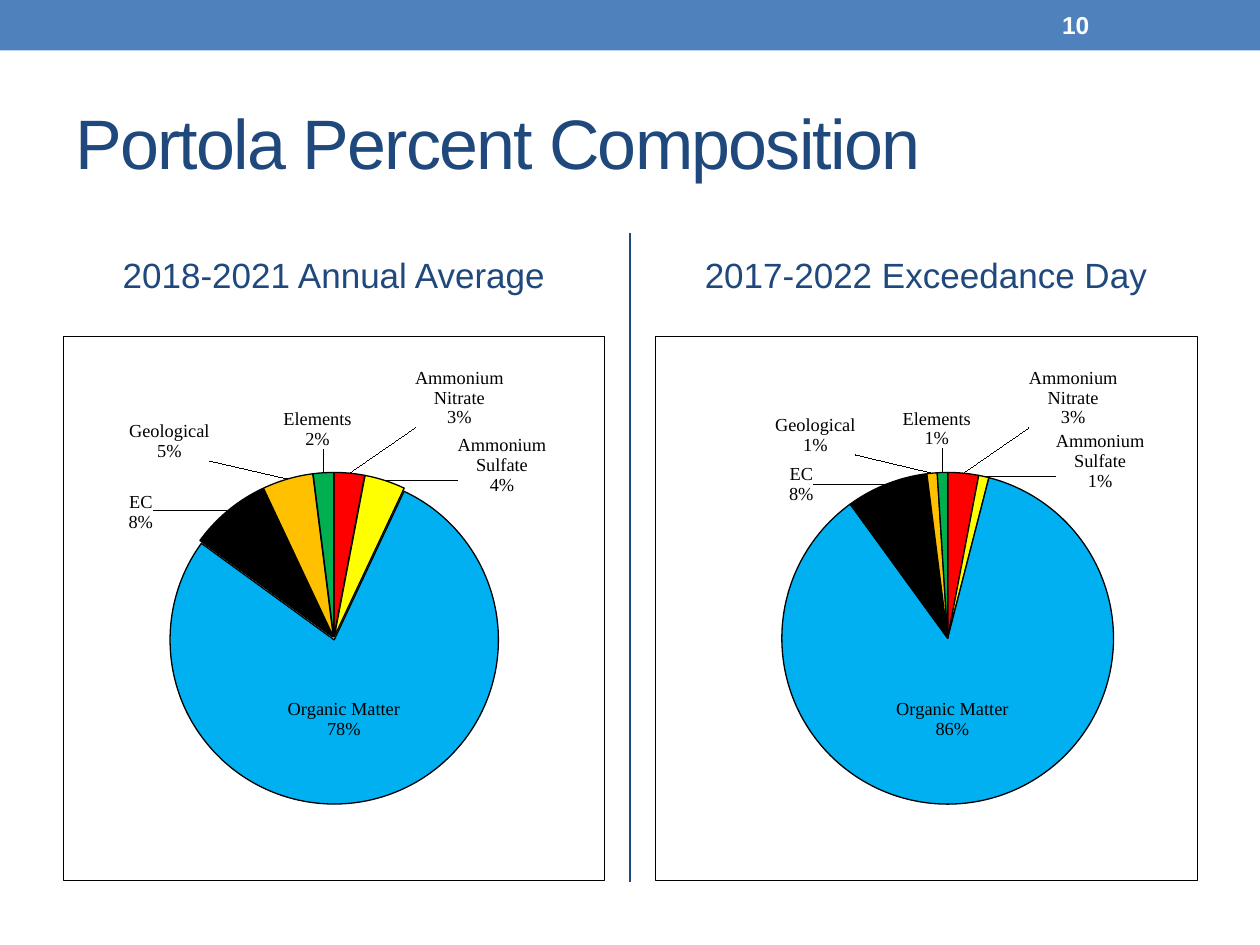
from dataclasses import dataclass

from lxml.etree import SubElement
from pptx import Presentation
from pptx.chart.data import CategoryChartData
from pptx.dml.color import RGBColor
from pptx.enum.chart import XL_CHART_TYPE as ChartType
from pptx.enum.shapes import MSO_CONNECTOR as Connector, MSO_SHAPE as Shape
from pptx.enum.text import MSO_ANCHOR as Anchor, PP_ALIGN as Align
from pptx.oxml import parse_xml
from pptx.oxml.ns import nsdecls, qn
from pptx.util import Pt

NAVY, BLUE, WHITE, BLACK = "1F497D", "4F81BD", "FFFFFF", "000000"
PANEL_WIDTH = 309.6


@dataclass(frozen=True)
class Component:
    name: str
    color: str
    label_x: float
    label_y: float
    label_position: str = "outEnd"


@dataclass(frozen=True)
class Panel:
    left: float
    heading: str
    shares: tuple[int, ...]
    plot_left: float
    explosion: int = 0


@dataclass(frozen=True)
class TextStyle:
    size: float
    color: str
    bold: bool = False
    align: Align = Align.LEFT
    space_before: float = 0
    spacing: int = 0


COMPONENTS = (
    Component("Ammonium Nitrate", "FF0000", 0.12, -0.07),
    Component("Ammonium Sulfate", "FFFF00", 0.13, 0.04),
    Component("Organic Matter", "00B0F0", -0.02, 0, "ctr"),
    Component("EC", BLACK, -0.13, 0.05),
    Component("Geological", "FFC000", -0.14, -0.02),
    Component("Elements", "00B050", -0.01, -0.03),
)
PANELS = (
    Panel(36, "2018-2021 Annual Average", (3, 4, 78, 8, 5, 2), 0.18, 1),
    Panel(374.4, "2017-2022 Exceedance Day", (3, 1, 86, 8, 1, 1), 0.22),
)
TITLE = TextStyle(40, NAVY, spacing=-100)
HEADING = TextStyle(20, NAVY, align=Align.CENTER, space_before=4)
PAGE_NUMBER = TextStyle(14, WHITE, bold=True)


def rgb(value: str) -> RGBColor:
    return RGBColor.from_string(value)


def add_text(slide, text: str, left: float, top: float, width: float,
             height: float, style: TextStyle) -> None:
    shape = slide.shapes.add_textbox(Pt(left), Pt(top), Pt(width), Pt(height))
    frame = shape.text_frame
    frame.word_wrap = True
    frame.vertical_anchor = Anchor.MIDDLE
    paragraph = frame.paragraphs[0]
    paragraph.text = text
    paragraph.alignment = style.align
    paragraph.space_before = Pt(style.space_before)
    font = paragraph.font
    font.name, font.size, font.bold = "Arial", Pt(style.size), style.bold
    font.color.rgb = rgb(style.color)
    if style.spacing:
        properties = paragraph._p.get_or_add_pPr().find(qn("a:defRPr"))
        properties.set("spc", str(style.spacing))


def add_value(parent, tag: str, value) -> None:
    SubElement(parent, qn(f"c:{tag}")).set("val", str(value))


def add_layout(parent, **values) -> None:
    layout = SubElement(SubElement(parent, qn("c:layout")), qn("c:manualLayout"))
    for tag, value in values.items():
        add_value(layout, tag, value)


def add_label_settings(parent, position: str) -> None:
    parent.append(parse_xml(
        f'<c:txPr {nsdecls("c", "a")}><a:bodyPr/><a:p><a:pPr><a:defRPr sz="1050">'
        f'<a:solidFill><a:srgbClr val="{BLACK}"/></a:solidFill>'
        '<a:latin typeface="Times New Roman"/></a:defRPr></a:pPr></a:p></c:txPr>'))
    add_value(parent, "dLblPos", position)
    shown = ("showCatName", "showPercent")
    for tag in ("showLegendKey", "showVal", "showCatName", "showSerName",
                "showPercent", "showBubbleSize"):
        add_value(parent, tag, int(tag in shown))
    SubElement(parent, qn("c:separator")).text = "\n"


def add_labels(series) -> None:
    labels = parse_xml(f'<c:dLbls {nsdecls("c", "a")}/>')
    for index, component in enumerate(COMPONENTS):
        label = SubElement(labels, qn("c:dLbl"))
        add_value(label, "idx", index)
        add_layout(label, x=component.label_x, y=component.label_y)
        add_label_settings(label, component.label_position)
    add_label_settings(labels, "outEnd")
    add_value(labels, "showLeaderLines", 1)
    series._element.find(qn("c:cat")).addprevious(labels)


def set_outline(line) -> None:
    line.color.rgb = rgb(BLACK)
    line.width = Pt(0.75)


def add_pie(slide, panel: Panel) -> None:
    data = CategoryChartData()
    data.categories = [component.name for component in COMPONENTS]
    data.add_series("Series 1", panel.shares)
    chart = slide.shapes.add_chart(
        ChartType.PIE, Pt(panel.left), Pt(192.2), Pt(PANEL_WIDTH), Pt(311), data).chart
    chart.has_title = chart.has_legend = False
    chart.font.name, chart.font.size = "Arial", Pt(8.5)
    chart.font.color.rgb = rgb(BLACK)
    chart._chartSpace.find(qn("c:txPr")).addprevious(parse_xml(
        f'<c:spPr {nsdecls("c", "a")}>'
        f'<a:solidFill><a:srgbClr val="{WHITE}"/></a:solidFill>'
        f'<a:ln w="{Pt(0.25)}"><a:solidFill><a:srgbClr val="{BLACK}"/>'
        '</a:solidFill></a:ln></c:spPr>'))

    plot = chart.plots[0]
    plot.vary_by_categories = True
    series = plot.series[0]
    set_outline(series.format.line)
    for index, component in enumerate(COMPONENTS):
        appearance = series.points[index].format
        appearance.fill.solid()
        appearance.fill.fore_color.rgb = rgb(component.color)
        set_outline(appearance.line)
    add_labels(series)
    if panel.explosion:
        series._element.find(qn("c:spPr")).addnext(parse_xml(
            f'<c:explosion {nsdecls("c")} val="{panel.explosion}"/>'))

    plot_area = chart._chartSpace.find(qn("c:chart")).find(qn("c:plotArea"))
    for layout in plot_area.findall(qn("c:layout")):
        plot_area.remove(layout)
    add_layout(plot_area, layoutTarget="inner", xMode="edge", yMode="edge",
               x=panel.plot_left, y=0.25, w=0.64, h=0.61)
    plot_area.insert(0, plot_area[-1])


def add_frame(slide) -> None:
    band = slide.shapes.add_shape(Shape.RECTANGLE, 0, 0, Pt(720), Pt(28.8))
    band.shadow.inherit = False
    band.fill.solid()
    band.fill.fore_color.rgb = rgb(BLUE)
    band.line.fill.background()
    divider = slide.shapes.add_connector(
        Connector.STRAIGHT, Pt(360), Pt(133.2), Pt(360), Pt(504))
    divider.line.color.rgb = rgb(NAVY)
    divider.line.width = Pt(1.5)
    SubElement(divider._element.spPr, qn("a:effectLst"))


def main() -> None:
    presentation = Presentation()
    presentation.slide_width, presentation.slide_height = Pt(720), Pt(540)
    slide = presentation.slides.add_slide(presentation.slide_layouts[6])
    add_frame(slide)
    add_text(slide, "Portola Percent Composition", 36, 41.8, 648, 77.8, TITLE)
    for panel in PANELS:
        add_text(slide, panel.heading, panel.left, 131.8, PANEL_WIDTH, 50.4, HEADING)
    add_text(slide, "10", 599.8, 1.4, 84.2, 25.9, PAGE_NUMBER)
    for panel in PANELS:
        add_pie(slide, panel)
    presentation.save("out.pptx")


if __name__ == "__main__":
    main()
